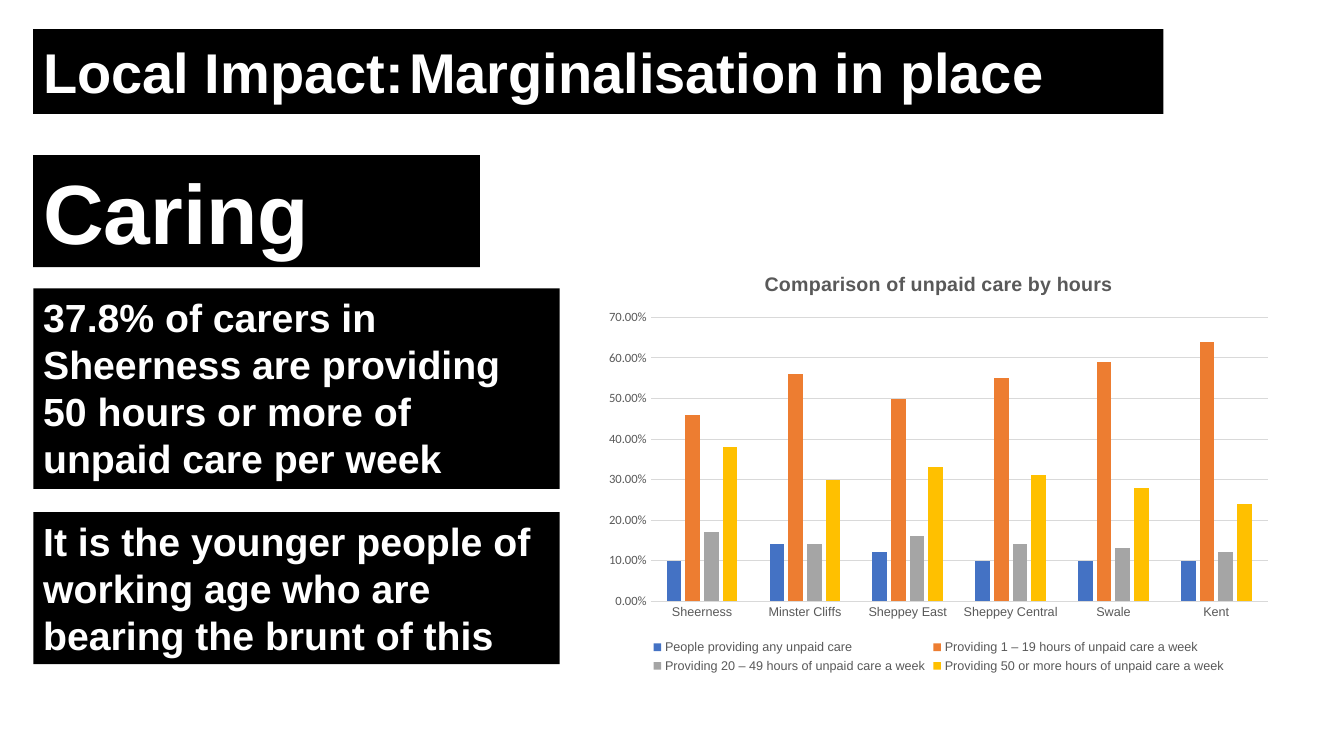
from lxml import etree
from pptx import Presentation
from pptx.chart.data import CategoryChartData
from pptx.dml.color import RGBColor
from pptx.enum.chart import XL_CHART_TYPE, XL_LEGEND_POSITION, XL_TICK_MARK
from pptx.enum.shapes import MSO_SHAPE
from pptx.enum.text import MSO_ANCHOR, PP_ALIGN
from pptx.oxml.ns import qn
from pptx.util import Inches, Pt

COLUMNS = XL_CHART_TYPE.COLUMN_CLUSTERED
BOTTOM = XL_LEGEND_POSITION.BOTTOM
NO_TICK = XL_TICK_MARK.NONE
TOP, MIDDLE = MSO_ANCHOR.TOP, MSO_ANCHOR.MIDDLE

BLACK, WHITE, GREY, RULE = "000000", "FFFFFF", "595959", "D9D9D9"
MARGIN = 0.33

# Content: text, left, top, width, height, size, anchor
FINDINGS = [
    ("Caring", MARGIN, 1.54, 4.43, 1.11, 60, TOP),
    ("37.8% of carers in Sheerness are providing 50 hours or more of "
     "unpaid care per week", MARGIN, 2.86, 5.22, 1.99, 28, TOP),
    ("It is the younger people of working age who are bearing the brunt "
     "of this", MARGIN, 5.08, 5.22, 1.51, 28, TOP),
]
HEADING = [
    ("Local Impact:", MARGIN, 0.29, 3.84, 0.84, 40, MIDDLE),
    ("Marginalisation in place", 3.96, 0.29, 7.58, 0.84, 40, MIDDLE),
]

CHART_TITLE = "Comparison of unpaid care by hours"
CHART_AREA = (5.91, 2.52, 6.8, 4.2)
PLOT_LAYOUT = {"x": 0.08, "y": 0.15, "w": 0.9, "h": 0.67}
PLACES = ["Sheerness", "Minster Cliffs", "Sheppey East", "Sheppey Central",
          "Swale", "Kent"]
CARE_HOURS = [
    ("People providing any unpaid care", "4472C4",
     (0.1, 0.14, 0.12, 0.1, 0.1, 0.1)),
    ("Providing 1 – 19 hours of unpaid care a week", "ED7D31",
     (0.46, 0.56, 0.5, 0.55, 0.59, 0.64)),
    ("Providing 20 – 49 hours of unpaid care a week", "A5A5A5",
     (0.17, 0.14, 0.16, 0.14, 0.13, 0.12)),
    ("Providing 50 or more hours of unpaid care a week", "FFC000",
     (0.38, 0.3, 0.33, 0.31, 0.28, 0.24)),
]


def rgb(value):
    return RGBColor.from_string(value)


def style_font(font, size, colour, bold=False, name="Arial"):
    font.name, font.size, font.bold = name, Pt(size), bold
    font.color.rgb = rgb(colour)


def add_label(shapes, text, left, top, width, height, size, anchor):
    label = shapes.add_shape(
        MSO_SHAPE.RECTANGLE, *map(Inches, (left, top, width, height)))
    label.shadow.inherit = False
    label.fill.solid()
    label.fill.fore_color.rgb = rgb(BLACK)
    label.line.fill.background()
    frame = label.text_frame
    frame.word_wrap = True
    frame.vertical_anchor = anchor
    paragraph = frame.paragraphs[0]
    paragraph.alignment = PP_ALIGN.LEFT
    run = paragraph.add_run()
    run.text = text
    style_font(run.font, size, WHITE, bold=True)


def place_plot(chart):
    """Fix the inner plot area as fractions of the chart."""
    plot_area = chart._chartSpace.chart.plotArea
    for old in plot_area.findall(qn("c:layout")):
        plot_area.remove(old)
    layout = etree.Element(qn("c:layout"))
    plot_area.insert(0, layout)
    manual = etree.SubElement(layout, qn("c:manualLayout"))
    settings = {"layoutTarget": "inner", "xMode": "edge", "yMode": "edge",
                **PLOT_LAYOUT}
    for tag, value in settings.items():
        etree.SubElement(manual, qn("c:" + tag)).set("val", str(value))


def add_care_chart(slide):
    data = CategoryChartData(number_format="0.00%")
    data.categories = PLACES
    for name, _, shares in CARE_HOURS:
        data.add_series(name, shares)
    chart = slide.shapes.add_chart(
        COLUMNS, *map(Inches, CHART_AREA), data).chart
    style_font(chart.font, 10, BLACK, name="Calibri")

    # Title and legend
    chart.has_title = True
    title = chart.chart_title
    title.include_in_layout = False
    title_run = title.text_frame.paragraphs[0].add_run()
    title_run.text = CHART_TITLE
    style_font(title_run.font, 14, GREY, bold=True)
    chart.has_legend = True
    chart.legend.position = BOTTOM
    chart.legend.include_in_layout = False
    style_font(chart.legend.font, 9, GREY)

    # Columns
    plot = chart.plots[0]
    plot.vary_by_categories = False
    plot.gap_width, plot.overlap = 219, -27
    for series, (_, colour, _) in zip(plot.series, CARE_HOURS):
        series.format.fill.solid()
        series.format.fill.fore_color.rgb = rgb(colour)

    # Axes
    places, shares = chart.category_axis, chart.value_axis
    for axis, font_name in ((places, "Arial"), (shares, "Calibri")):
        axis.major_tick_mark = axis.minor_tick_mark = NO_TICK
        style_font(axis.tick_labels.font, 9, GREY, name=font_name)
    shares.minimum_scale, shares.maximum_scale = 0, 0.7
    shares.major_unit = 0.1
    shares.tick_labels.number_format = "0.00%"
    shares.tick_labels.number_format_is_linked = False
    shares.format.line.fill.background()
    for line in (places.format.line, shares.major_gridlines.format.line):
        line.color.rgb = rgb(RULE)
        line.width = Pt(0.75)
    place_plot(chart)


def main():
    deck = Presentation()
    deck.slide_width, deck.slide_height = Inches(13.33), Inches(7.5)
    slide = deck.slides.add_slide(deck.slide_layouts[6])
    add_care_chart(slide)
    for finding in FINDINGS:
        add_label(slide.shapes, *finding)
    heading_group = slide.shapes.add_group_shape()
    for part in HEADING:
        add_label(heading_group.shapes, *part)
    deck.save("out.pptx")


if __name__ == "__main__":
    main()
